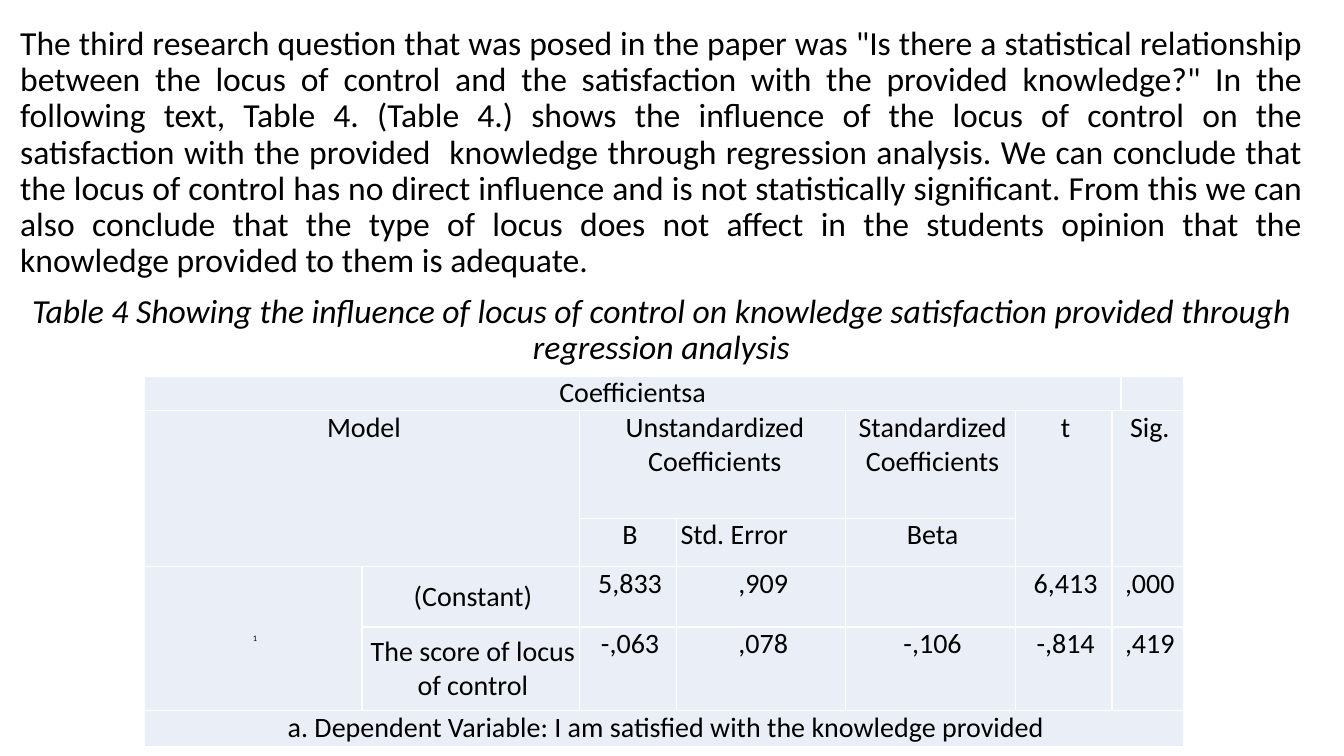
from pptx import Presentation
from pptx.dml.color import RGBColor
from pptx.enum import text as t
from pptx.oxml import parse_xml
from pptx.oxml.ns import nsdecls
from pptx.util import Inches, Pt

COLORS = {"ink": "000000", "cell": "EAEFF7", "rule": "FFFFFF"}
FONT = "Calibri"
BODY = (
    'The third research question that was posed in the paper was "Is there a '
    "statistical relationship between the locus of control and the satisfaction "
    'with the provided knowledge?" In the following text, Table 4. (Table 4.) '
    "shows the influence of the locus of control on the satisfaction with the "
    "provided  knowledge through regression analysis. We can conclude that the "
    "locus of control has no direct influence and is not statistically "
    "significant. From this we can also conclude that the type of locus does not "
    "affect in the students opinion that the knowledge provided to them is "
    "adequate."
)
CAPTION = (
    "Table 4 Showing the influence of locus of control on knowledge "
    "satisfaction provided through regression analysis"
)
COLS = [2.16, 2.16, 0.96, 1.68, 1.68, 0.96, 0.09, 0.62]
ROWS = [0.3, 1.07, 0.48, 0.6, 0.83, 0.36]
CELLS = [
    ["Coefficientsa", "", "", "", "", "", "", ""],
    ["Model", "", "Unstandardized Coefficients", "", "Standardized Coefficients",
     "t", "Sig.", ""],
    ["", "", "B", "Std. Error", "Beta", "", "", ""],
    ["1", "(Constant)", "5,833", ",909", "", "6,413", ",000", ""],
    ["", "The score of locus of control", "-,063", ",078", "-,106", "-,814",
     ",419", ""],
    ["a. Dependent Variable: I am satisfied with the knowledge provided",
     "", "", "", "", "", "", ""],
]
# First and last cell of each merged block, as (row, column)
SPANS = [
    ((0, 0), (0, 6)), ((1, 0), (2, 1)), ((1, 2), (1, 3)), ((1, 5), (2, 5)),
    ((1, 6), (2, 7)), ((3, 0), (4, 0)), ((3, 6), (3, 7)), ((4, 6), (4, 7)),
    ((5, 0), (5, 7)),
]


def style(para, size, align, italic=None):
    para.alignment = align
    for run in para.runs:
        run.font.name = FONT
        run.font.size = Pt(size)
        run.font.italic = italic
        run.font.color.rgb = RGBColor.from_string(COLORS["ink"])


def indent(para, left):
    props = para._p.get_or_add_pPr()
    props.set("marL", str(Inches(left)))
    props.set("indent", "0")
    return props


def add_body(slide):
    box = slide.placeholders[1]
    box.left, box.top = Inches(0.1), Inches(0.21)
    box.width, box.height = Inches(12.92), Inches(4.76)
    frame = box.text_frame
    frame.word_wrap = True
    frame.auto_size = t.MSO_AUTO_SIZE.NONE
    frame.text = BODY + "\n" + CAPTION
    body, caption = frame.paragraphs
    style(body, 24, t.PP_ALIGN.JUSTIFY)
    style(caption, 24, t.PP_ALIGN.CENTER, True)
    for para in (body, caption):
        para.line_spacing = 0.9
        para.space_before = Pt(10)
        indent(para, 0).append(parse_xml(f"<a:buNone {nsdecls('a')}/>"))


def add_rules(cell):
    """Draw a thin line on all four sides of a cell."""
    props = cell._tc.get_or_add_tcPr()
    for i, side in enumerate("LRTB"):
        props.insert(i, parse_xml(
            f'<a:ln{side} {nsdecls("a")} w="{Pt(1)}"><a:solidFill>'
            f'<a:srgbClr val="{COLORS["rule"]}"/></a:solidFill></a:ln{side}>'))


def fill_cell(cell, label, row, col):
    cell.fill.solid()
    cell.fill.fore_color.rgb = RGBColor.from_string(COLORS["cell"])
    add_rules(cell)
    cell.margin_left = cell.margin_right = 0
    cell.margin_top = cell.margin_bottom = 0
    if not label:
        return
    cell.text_frame.text = label
    para = cell.text_frame.paragraphs[0]
    left = label == "Std. Error"
    style(para, 6 if label == "1" else 20,
          t.PP_ALIGN.LEFT if left else t.PP_ALIGN.CENTER)
    indent(para, 0.04 if row else 0)
    if row in (3, 4) and col < 2:
        cell.vertical_anchor = t.MSO_ANCHOR.MIDDLE


def add_table(slide):
    table = slide.shapes.add_table(
        len(ROWS), len(COLS), Inches(1.43), Inches(3.73),
        Inches(sum(COLS)), Inches(sum(ROWS))).table
    table.first_row = table.horz_banding = False
    for col, width in zip(table.columns, COLS):
        col.width = Inches(width)
    for row, height in zip(table.rows, ROWS):
        row.height = Inches(height)
    for first, last in SPANS:
        table.cell(*first).merge(table.cell(*last))
    for r, labels in enumerate(CELLS):
        for c, label in enumerate(labels):
            fill_cell(table.cell(r, c), label, r, c)


def main():
    deck = Presentation()
    deck.slide_width, deck.slide_height = Inches(13.33), Inches(7.5)
    slide = deck.slides.add_slide(deck.slide_layouts[1])
    title = slide.shapes.title._element
    title.getparent().remove(title)
    add_body(slide)
    add_table(slide)
    deck.save("out.pptx")


if __name__ == "__main__":
    main()
